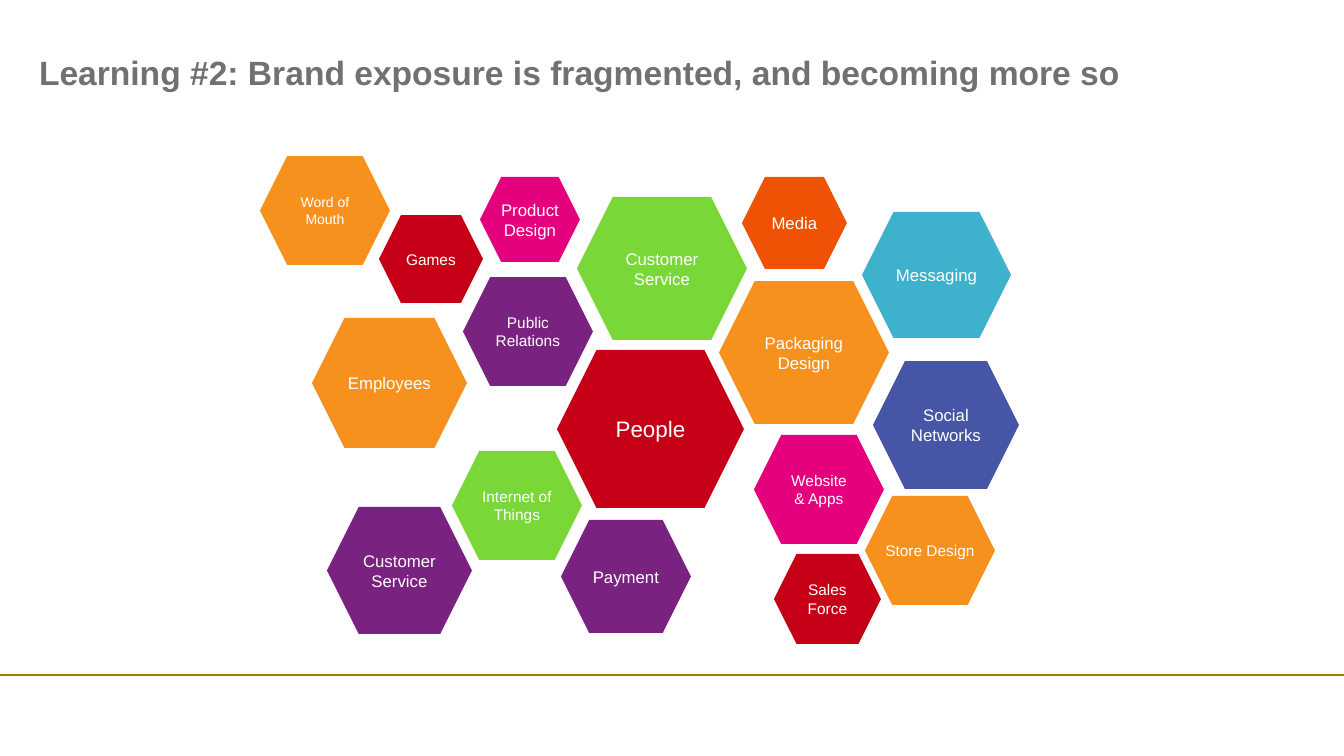
from lxml.etree import SubElement
from pptx import Presentation
from pptx.dml.color import RGBColor
from pptx.enum.shapes import MSO_CONNECTOR as CONNECTOR, MSO_SHAPE as SHAPE
from pptx.enum.text import MSO_ANCHOR as ANCHOR, PP_ALIGN as ALIGN
from pptx.oxml.ns import qn
from pptx.util import Pt

# Content
TITLE = "Learning #2: Brand exposure is fragmented, and becoming more so"
COLORS = {
    "red": "C50017", "pink": "E5007E", "green": "79D738",
    "amber": "F7911E", "orange": "EF5205", "teal": "3EB1CC",
    "purple": "7A2280", "blue": "4655A5",
    "white": "FFFFFF", "gray": "717171", "gold": "A67A00",
}
# Label, colour, text size, (left, top, width, height) in px
TOUCHPOINTS = [
    ("People", "red", 16, (557, 350, 187, 158)),
    ("Product Design", "pink", 12, (480, 177, 100, 85)),
    ("Customer Service", "green", 12, (577, 197, 170, 143)),
    ("Packaging\nDesign", "amber", 12, (719, 281, 170, 143)),
    ("Media", "orange", 12, (742, 177, 105, 92)),
    ("Messaging", "teal", 12, (862, 212, 149, 126)),
    ("Word of Mouth", "amber", 10, (260, 156, 130, 109)),
    ("Public Relations", "purple", 11, (463, 277, 130, 109)),
    ("Website\v& Apps", "pink", 11, (754, 435, 130, 109)),
    ("Internet of Things", "green", 11, (452, 451, 130, 109)),
    ("Games", "red", 11, (379, 215, 104, 88)),
    ("Payment", "purple", 12, (561, 520, 130, 113)),
    ("Social Networks", "blue", 12, (873, 361, 146, 128)),
    ("Store Design", "amber", 11, (865, 496, 130, 109)),
    ("Employees", "amber", 12, (312, 318, 155, 130)),
    ("Sales Force", "red", 11, (774, 554, 107, 90)),
    ("Customer Service", "purple", 12, (327, 507, 145, 127)),
]
SLIDE_WIDTH, SLIDE_HEIGHT = 1344, 756
RULE_TOP = 675
TITLE_BOX = (39, 47, 1264, 78)
SCALE = 914400 / 100.8


def px(length):
    return round(length * SCALE)


def color(name):
    return RGBColor.from_string(COLORS[name])


def set_text(shape, text, size, color_name, bold, align, frame_format):
    frame = shape.text_frame
    for name, value in frame_format.items():
        setattr(frame, name, value)
    frame.text = text
    for paragraph in frame.paragraphs:
        paragraph.alignment = align
        for run in paragraph.runs:
            font_format = {"name": "Arial", "size": Pt(size), "bold": bold}
            for name, value in font_format.items():
                setattr(run.font, name, value)
            run.font.color.rgb = color(color_name)


def add_rule(slide):
    rule = slide.shapes.add_connector(
        CONNECTOR.STRAIGHT, 0, px(RULE_TOP), px(SLIDE_WIDTH), px(RULE_TOP))
    rule.line.color.rgb = color("gold")
    rule.line.width = Pt(1.5)
    SubElement(rule.element.spPr, qn("a:effectLst"))


def add_title(slide):
    box = slide.shapes.add_textbox(*map(px, TITLE_BOX))
    set_text(box, TITLE, 24, "gray", True, ALIGN.LEFT, {
        "word_wrap": True, "vertical_anchor": ANCHOR.TOP,
        "margin_left": 0, "margin_right": 0,
        "margin_top": px(5), "margin_bottom": 0})


def add_hexagon(slide, label, fill, size, bounds):
    hexagon = slide.shapes.add_shape(SHAPE.HEXAGON, *map(px, bounds))
    hexagon.shadow.inherit = False
    hexagon.fill.solid()
    hexagon.fill.fore_color.rgb = color(fill)
    hexagon.line.fill.background()
    set_text(hexagon, label, size, "white", False, ALIGN.CENTER, {
        "word_wrap": True, "vertical_anchor": ANCHOR.MIDDLE,
        "margin_left": 0, "margin_right": 0,
        "margin_top": px(5), "margin_bottom": px(5)})


def main():
    presentation = Presentation()
    presentation.slide_width = px(SLIDE_WIDTH)
    presentation.slide_height = px(SLIDE_HEIGHT)
    slide = presentation.slides.add_slide(presentation.slide_layouts[6])
    add_rule(slide)
    add_title(slide)
    for touchpoint in TOUCHPOINTS:
        add_hexagon(slide, *touchpoint)
    presentation.save("out.pptx")


if __name__ == "__main__":
    main()
